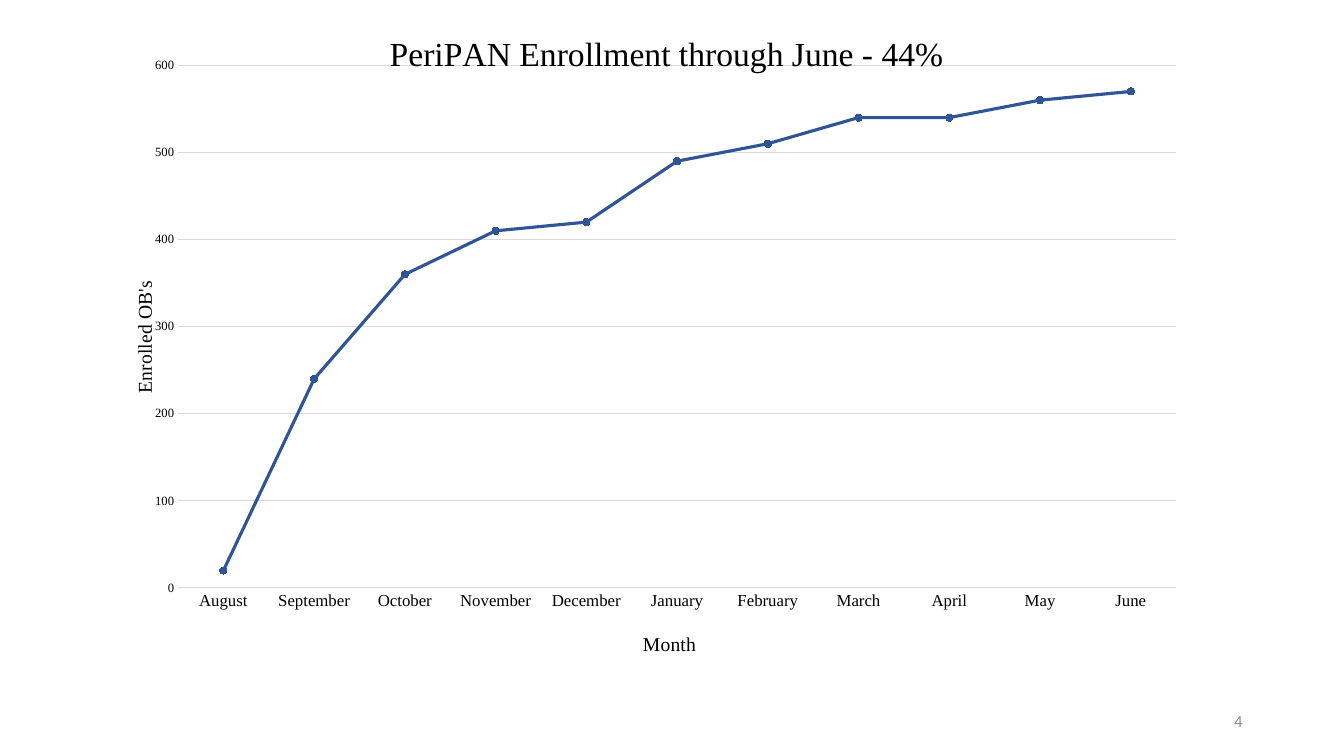
from lxml import etree
from pptx import Presentation
from pptx import util as u
from pptx.chart.data import CategoryChartData
from pptx.dml.color import RGBColor
from pptx.enum import chart as ch, text
from pptx.oxml.ns import qn

WIDE, HIGH = u.Inches(13.33), u.Inches(7.5)
BLACK = RGBColor(0, 0, 0)
BLUE = RGBColor(0x2F, 0x55, 0x97)
PALE = RGBColor(0xD9, 0xD9, 0xD9)
GRAY = RGBColor(0x8C, 0x8C, 0x8C)
SERIF = "Times New Roman"

COUNTS = {
    "August": 20, "September": 240, "October": 360, "November": 410,
    "December": 420, "January": 490, "February": 510, "March": 540,
    "April": 540, "May": 560, "June": 570,
}


def style(font, size, color=BLACK, name=SERIF):
    font.name, font.size, font.bold = name, u.Pt(size), False
    font.color.rgb = color


def place(layout, **shares):
    """Fix a chart part at shares of the chart's size."""
    for old in list(layout):
        layout.remove(old)
    manual = etree.SubElement(layout, qn("c:manualLayout"))
    if "w" in shares:
        etree.SubElement(manual, qn("c:layoutTarget")).set("val", "inner")
    for key in ("x", "y"):
        etree.SubElement(manual, qn(f"c:{key}Mode")).set("val", "edge")
    for key, share in shares.items():
        etree.SubElement(manual, qn(f"c:{key}")).set("val", str(share))


def add_title(owner, words, size, x, y, turn=None):
    """Title a chart or an axis."""
    title = owner.chart_title if hasattr(owner, "chart_title") else owner.axis_title
    frame = title.text_frame
    frame.text = words
    style(frame.paragraphs[0].font, size)
    root = title._element
    layout = root.find(qn("c:layout"))
    if layout is None:
        layout = etree.Element(qn("c:layout"))
        root.find(qn("c:tx")).addnext(layout)
    place(layout, x=x, y=y)
    if turn is not None:
        body = root.find(".//" + qn("a:bodyPr"))
        body.set("rot", str(turn * 60000))
        body.set("vert", "horz")


def set_axis(axis, size):
    axis.major_tick_mark = axis.minor_tick_mark = ch.XL_TICK_MARK.NONE
    style(axis.tick_labels.font, size)


def rule(line):
    line.color.rgb = PALE
    line.width = u.Pt(0.75)


def add_trend(slide):
    data = CategoryChartData()
    data.categories = list(COUNTS)
    data.add_series("Enrolled", list(COUNTS.values()))
    chart = slide.shapes.add_chart(
        ch.XL_CHART_TYPE.LINE_MARKERS, int(WIDE * 0.087), 0,
        int(WIDE * 0.827), int(HIGH * 0.875), data).chart
    chart.has_legend = False
    style(chart.font, 10)

    # Axes
    months, people = chart.category_axis, chart.value_axis
    set_axis(months, 12)
    set_axis(people, 9)
    rule(months.format.line)
    rule(people.major_gridlines.format.line)
    people.format.line.fill.background()
    people.minimum_scale, people.maximum_scale = 0, 600
    people.major_unit = 100

    # Titles
    add_title(chart, "PeriPAN Enrollment through June - 44%", 24, 0.24, 0.04)
    chart.chart_title.include_in_layout = False
    add_title(months, "Month", 14, 0.47, 0.95)
    add_title(people, "Enrolled OB's", 14, 0.01, 0.42, turn=-90)

    # Plot area and line
    area = chart._chartSpace.find(".//" + qn("c:plotArea"))
    layout = area.find(qn("c:layout"))
    if layout is None:
        layout = etree.Element(qn("c:layout"))
        area.insert(0, layout)
    place(layout, x=0.055, y=0.099, w=0.898, h=0.791)
    plot = chart.plots[0]
    plot.vary_by_categories = False
    trend = plot.series[0]
    trend.smooth = False
    trend.format.line.color.rgb = BLUE
    trend.format.line.width = u.Pt(2.25)
    mark = trend.marker
    mark.style, mark.size = ch.XL_MARKER_STYLE.CIRCLE, 5
    mark.format.fill.solid()
    mark.format.fill.fore_color.rgb = BLUE
    mark.format.line.color.rgb = BLUE


def add_page(slide, number):
    frame = slide.shapes.add_textbox(
        int(WIDE * 0.707), int(HIGH * 0.927),
        int(WIDE * 0.225), int(HIGH * 0.053)).text_frame
    frame.word_wrap = True
    frame.vertical_anchor = text.MSO_ANCHOR.MIDDLE
    line = frame.paragraphs[0]
    line.text = number
    line.alignment = text.PP_ALIGN.RIGHT
    style(line.font, 12, GRAY, "Calibri")


def main():
    deck = Presentation()
    deck.slide_width, deck.slide_height = WIDE, HIGH
    slide = deck.slides.add_slide(deck.slide_layouts[6])
    add_page(slide, "4")
    add_trend(slide)
    deck.save("out.pptx")


if __name__ == "__main__":
    main()
